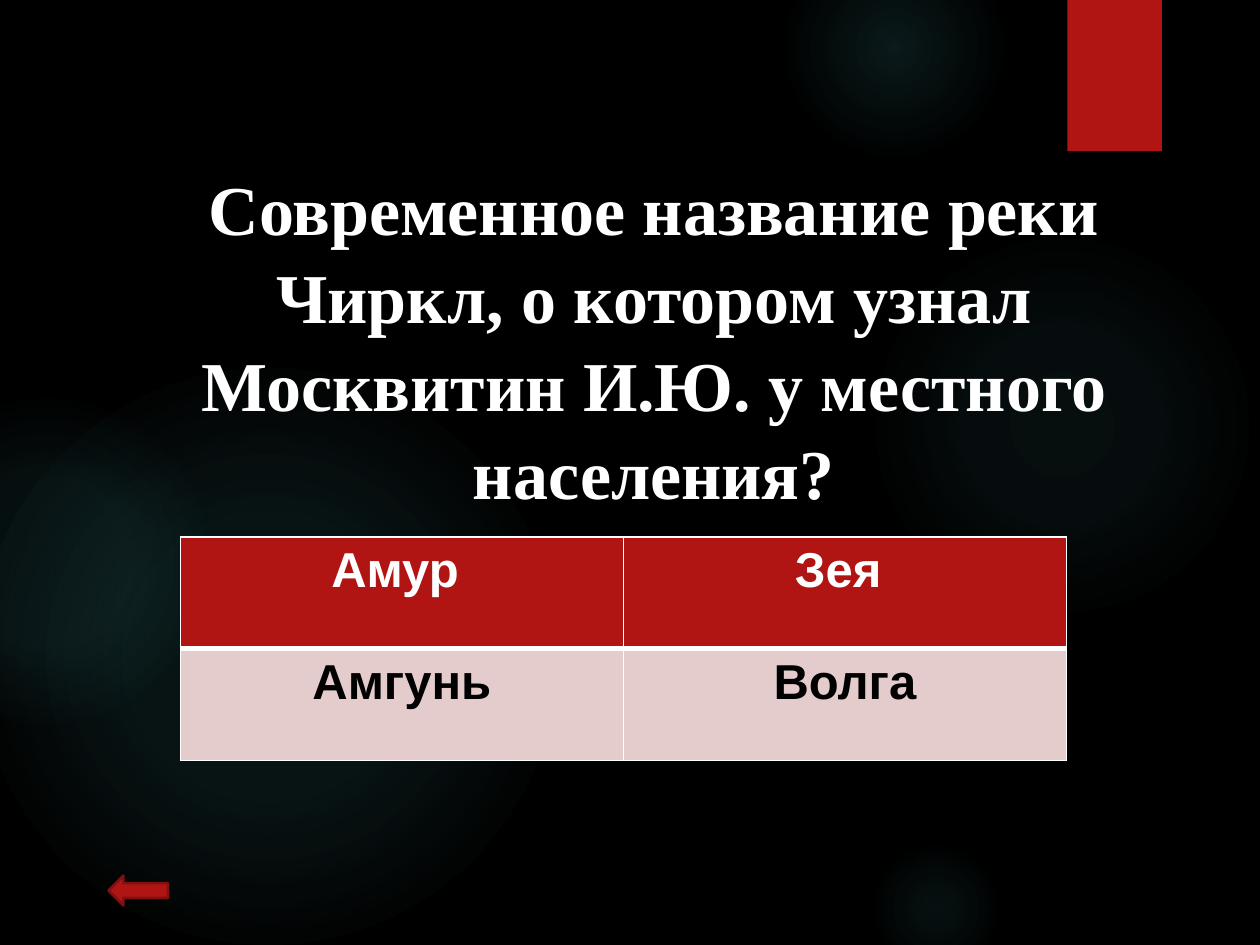
from lxml import etree
from pptx import Presentation
from pptx.dml.color import RGBColor
from pptx.enum.shapes import MSO_SHAPE as Preset
from pptx.enum.text import MSO_AUTO_SIZE as AutoSize, PP_ALIGN as Align
from pptx.oxml import parse_xml
from pptx.oxml.ns import nsdecls, qn
from pptx.util import Pt

RED, DARK_RED, PINK = "B01513", "82100E", "E4CCCC"
WHITE, BLACK, TEAL = "FFFFFF", "000000", "50B9C1"

# left, top, diameter, then (position %, opacity %) stops
GLOWS = [
    (496, 132, 222, [(0, 7), (36, 6), (69, 0)]),
    (448, -36, 126, [(0, 14), (36, 7), (73, 0)]),
    (496, 480, 78, [(0, 9), (36, 5), (66, 0)]),
    (-12, 210, 330, [(0, 11), (36, 10), (75, 0)]),
    (-66, 228, 186, [(0, 8), (36, 8), (72, 0)]),
]
QUESTION = ("Современное название реки Чиркл, о котором узнал "
            "Москвитин И.Ю. у местного населения?")
ANSWERS = [["Амур ", "Зея "], ["Амгунь", "Волга"]]


def color(hex_value):
    return RGBColor.from_string(hex_value)


def write_text(frame, text, *, size, font, fill, spacing=None):
    """Fill a text frame with one bold, centred paragraph."""
    paragraph = frame.paragraphs[0]
    paragraph.alignment = Align.CENTER
    if spacing:
        paragraph.line_spacing = spacing
    run = paragraph.add_run()
    run.text = text
    run.font.size = Pt(size)
    run.font.name = font
    run.font.bold = True
    run.font.color.rgb = color(fill)


def add_preset(slide, preset, left, top, width, height, fill=None, line=None):
    shape = slide.shapes.add_shape(preset, Pt(left), Pt(top), Pt(width), Pt(height))
    shape.shadow.inherit = False
    if fill:
        shape.fill.solid()
        shape.fill.fore_color.rgb = color(fill)
    else:
        shape.fill.background()
    if line:
        shape.line.color.rgb = color(line)
        shape.line.width = Pt(1.5)
    else:
        shape.line.fill.background()
    return shape


def add_glow(slide, left, top, diameter, stops):
    """Add a circle that fades out from its centre."""
    shape = add_preset(slide, Preset.OVAL, left, top, diameter, diameter)
    stop_xml = "".join(
        f'<a:gs pos="{position * 1000}"><a:srgbClr val="{TEAL}">'
        f'<a:alpha val="{opacity * 1000}"/></a:srgbClr></a:gs>'
        for position, opacity in stops)
    gradient = parse_xml(
        f'<a:gradFill {nsdecls("a")} rotWithShape="1"><a:gsLst>{stop_xml}</a:gsLst>'
        '<a:path path="circle"><a:fillToRect l="50000" t="50000" r="50000" b="50000"/>'
        '</a:path></a:gradFill>')
    properties = shape.element.spPr
    properties.replace(properties.find(qn("a:noFill")), gradient)


def add_question(slide):
    box = slide.shapes.add_textbox(Pt(78.5), Pt(88.5), Pt(590.4), Pt(200.9))
    box.text_frame.word_wrap = True
    box.text_frame.auto_size = AutoSize.SHAPE_TO_FIT_TEXT
    write_text(box.text_frame, QUESTION, size=40, font="Times New Roman",
               fill=WHITE, spacing=1.05)


def set_borders(cell, **widths):
    """Draw white borders, given as side=points in the order L, R, T, B."""
    properties = cell._tc.get_or_add_tcPr()
    for index, (side, width) in enumerate(widths.items()):
        line = etree.Element(qn(f"a:ln{side}"), w=str(Pt(width)))
        solid = etree.SubElement(line, qn("a:solidFill"))
        etree.SubElement(solid, qn("a:srgbClr"), val=WHITE)
        properties.insert(index, line)


def add_answers(slide):
    frame = slide.shapes.add_table(2, 2, Pt(103), Pt(306.9), Pt(506.4), Pt(127.6))
    row_formats = [(RED, WHITE, 1, 3), (PINK, BLACK, 3, 1)]
    for row, (texts, row_format) in enumerate(zip(ANSWERS, row_formats)):
        fill, text_color, top, bottom = row_format
        for column, text in enumerate(texts):
            cell = frame.table.cell(row, column)
            cell.fill.solid()
            cell.fill.fore_color.rgb = color(fill)
            set_borders(cell, L=1, R=1, T=top, B=bottom)
            write_text(cell.text_frame, text, size=28, font="Arial", fill=text_color)


def main():
    presentation = Presentation()
    presentation.slide_width, presentation.slide_height = Pt(720), Pt(540)
    slide = presentation.slides.add_slide(presentation.slide_layouts[6])
    slide.background.fill.solid()
    slide.background.fill.fore_color.rgb = color(BLACK)

    for glow in GLOWS:
        add_glow(slide, *glow)
    add_preset(slide, Preset.RECTANGLE, 610, 0, 54, 86.4, fill=RED)
    add_preset(slide, Preset.LEFT_ARROW, 62, 500.4, 34, 17, fill=RED, line=DARK_RED)
    add_question(slide)
    add_answers(slide)
    presentation.save("out.pptx")


if __name__ == "__main__":
    main()
